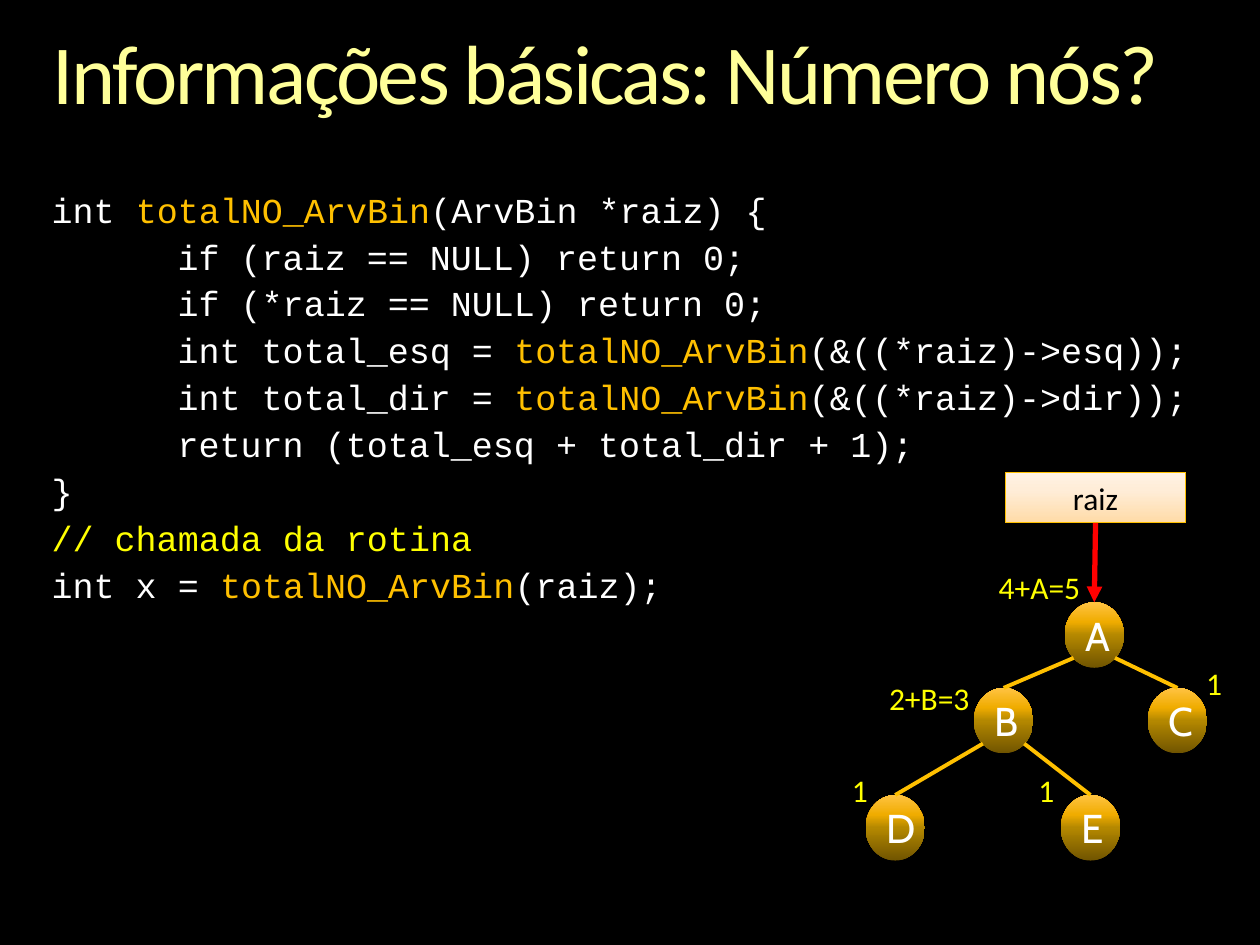
from dataclasses import dataclass

import lxml.etree
import pptx
import pptx.dml.color
import pptx.enum.shapes
import pptx.enum.text
import pptx.oxml.ns
import pptx.util

COLUMNS, ROWS = 100, 75
NODE_WIDTH, NODE_HEIGHT = 4.7, 5.2
COLORS = {
    "background": "000000", "title": "FFFF99", "code": "FFFFFF",
    "function": "FFC000", "note": "FFFF00", "edge": "FFC000",
    "pointer": "FF0000", "dark": "000000",
}
NODE_GRADIENT = {0: "705400", 50: "B48800", 70: "F0AC00", 100: "FFC342"}
ROOT_GRADIENT = {0: "FFDBA7", 65: "FFEDD8", 100: "FFF2E4"}
FUNCTION = "totalNO_ArvBin"
CODE = [
    "int totalNO_ArvBin(ArvBin *raiz) {",
    "\tif (raiz == NULL) return 0;",
    "\tif (*raiz == NULL) return 0;",
    "\tint total_esq = totalNO_ArvBin(&((*raiz)->esq));",
    "\tint total_dir = totalNO_ArvBin(&((*raiz)->dir));",
    "\treturn (total_esq + total_dir + 1);",
    "}",
    "// chamada da rotina",
    "int x = totalNO_ArvBin(raiz);",
]
CODE_FORMAT = {"size": pptx.util.Pt(20), "name": "Courier New"}
TITLE_FORMAT = {"size": pptx.util.Pt(48), "name": "Calibri"}
NODE_FORMAT = {"size": pptx.util.Pt(23), "name": "Cabin"}
LABEL_FORMAT = {"size": pptx.util.Pt(18), "name": "Calibri"}
NO_MARGINS = dict.fromkeys(
    ["margin_left", "margin_top", "margin_right", "margin_bottom"], 0)


@dataclass
class Box:
    text: str
    column: float
    row: float
    width: float = NODE_WIDTH
    height: float = NODE_HEIGHT


NODES = [Box("A", 84.5, 47.8), Box("B", 77.3, 54.6), Box("C", 91.1, 54.6),
         Box("D", 68.7, 63.1), Box("E", 84.2, 63.1)]
EDGES = ["AB", "BD", "AC", "BE"]
LABELS = [Box("1", 65.7, 60.7, 5.1, 4), Box("2+B=3", 68.7, 53.4, 10.1, 4),
          Box("1", 93.8, 52.2, 5.1, 4), Box("1", 80.5, 60.7, 5.1, 4),
          Box("4+A=5", 77.3, 44.6, 10.4, 4)]
ROOT = Box("raiz", 79.8, 37.5, 14.3, 4)

presentation = pptx.Presentation()
presentation.slide_width = pptx.util.Inches(10)
presentation.slide_height = pptx.util.Inches(7.5)
slide = presentation.slides.add_slide(presentation.slide_layouts[1])


def across(column: float) -> int:
    return round(presentation.slide_width * column / COLUMNS)


def down(row: float) -> int:
    return round(presentation.slide_height * row / ROWS)


def bounds(box: Box) -> tuple:
    return across(box.column), down(box.row), across(box.width), down(box.height)


def apply(target, formats: dict) -> None:
    for name, value in formats.items():
        setattr(target, name, value)


def rgb(color: str):
    return pptx.dml.color.RGBColor.from_string(color)


def add_run(paragraph, text: str, formats: dict, color: str):
    run = paragraph.add_run()
    run.text = text
    apply(run.font, formats)
    run.font.color.rgb = rgb(COLORS[color])
    return run


def center_text(shape, text: str, formats: dict, color: str) -> None:
    shape.text_frame.word_wrap = True
    paragraph = shape.text_frame.paragraphs[0]
    paragraph.alignment = pptx.enum.text.PP_ALIGN.CENTER
    add_run(paragraph, text, formats, color)


def set_gradient(shape, stops: dict) -> None:
    shape.fill.gradient()
    shape.fill.gradient_angle = 90
    stop_list = shape._element.spPr.find(".//" + pptx.oxml.ns.qn("a:gsLst"))
    for stop in list(stop_list):
        stop_list.remove(stop)
    for position, color in stops.items():
        stop = lxml.etree.SubElement(
            stop_list, pptx.oxml.ns.qn("a:gs"), pos=str(position * 1000))
        lxml.etree.SubElement(stop, pptx.oxml.ns.qn("a:srgbClr"), val=color)


def add_filled(box: Box, kind, stops: dict, formats: dict, color: str):
    shape = slide.shapes.add_shape(kind, *bounds(box))
    shape.shadow.inherit = False
    set_gradient(shape, stops)
    shape.line.fill.background()
    center_text(shape, box.text, formats, color)
    return shape


def add_line(start: tuple, target, color: str, width: float):
    line = slide.shapes.add_connector(
        pptx.enum.shapes.MSO_CONNECTOR.STRAIGHT, *start, *start)
    line.end_connect(target, 0)
    line.line.color.rgb = rgb(COLORS[color])
    line.line.width = pptx.util.Pt(width)
    lxml.etree.SubElement(line._element.spPr, pptx.oxml.ns.qn("a:effectLst"))
    return line


def add_edge(parent, child) -> None:
    share = 0.15 if child.left < parent.left else 0.85
    start = (round(parent.left + parent.width * share),
             round(parent.top + parent.height * 0.85))
    add_line(start, child, "edge", 2.25)


def place(placeholder, box: Box) -> None:
    apply(placeholder, dict(zip(["left", "top", "width", "height"], bounds(box))))
    apply(placeholder.text_frame, {
        **NO_MARGINS, "word_wrap": True,
        "auto_size": pptx.enum.text.MSO_AUTO_SIZE.NONE,
        "vertical_anchor": pptx.enum.text.MSO_ANCHOR.TOP})


def add_title() -> None:
    title = slide.shapes.title
    place(title, Box("", 4.2, 2.5, 91.7, 7.3))
    paragraph = title.text_frame.paragraphs[0]
    apply(paragraph, {"alignment": pptx.enum.text.PP_ALIGN.LEFT,
                      "line_spacing": 0.9, "space_before": 0})
    run = add_run(paragraph, "Informações básicas: Número nós?",
                  TITLE_FORMAT, "title")
    run._r.get_or_add_rPr().set("spc", "-150")


def add_code() -> None:
    body = slide.placeholders[1]
    place(body, Box("", 4.1, 15.3, 91.7, 32.6))
    for index, line in enumerate(CODE):
        frame = body.text_frame
        paragraph = frame.add_paragraph() if index else frame.paragraphs[0]
        properties = paragraph._p.get_or_add_pPr()
        apply(paragraph, {"line_spacing": 0.9,
                          "space_before": pptx.util.Pt(5.25 if index else 0)})
        lxml.etree.SubElement(properties, pptx.oxml.ns.qn("a:buNone"))
        for name, value in {"marL": 0, "indent": 0, "defTabSz": 914400}.items():
            properties.set(name, str(value))
        color = "note" if line.startswith("//") else "code"
        before, call, after = line.partition(FUNCTION)
        for text, shade in [(before, color), (call, "function"), (after, color)]:
            if text:
                add_run(paragraph, text, CODE_FORMAT, shade)


def add_tree() -> None:
    kinds = pptx.enum.shapes.MSO_SHAPE
    nodes = {box.text: add_filled(box, kinds.OVAL, NODE_GRADIENT,
                                  NODE_FORMAT, "code") for box in NODES}
    for parent, child in EDGES:
        add_edge(nodes[parent], nodes[child])
    root = add_filled(ROOT, kinds.RECTANGLE, ROOT_GRADIENT, LABEL_FORMAT, "dark")
    root.line.color.rgb = rgb(COLORS["edge"])
    root.line.width = pptx.util.Pt(0.75)
    pointer = add_line((root.left, root.top), nodes["A"], "pointer", 3)
    pointer.begin_connect(root, 2)
    lxml.etree.SubElement(pointer.line._get_or_add_ln(),
                          pptx.oxml.ns.qn("a:tailEnd"), type="triangle")
    for label in LABELS:
        center_text(slide.shapes.add_textbox(*bounds(label)), label.text,
                    LABEL_FORMAT, "note")


def main() -> None:
    slide.background.fill.solid()
    slide.background.fill.fore_color.rgb = rgb(COLORS["background"])
    add_title()
    add_code()
    add_tree()
    presentation.save("out.pptx")


if __name__ == "__main__":
    main()
